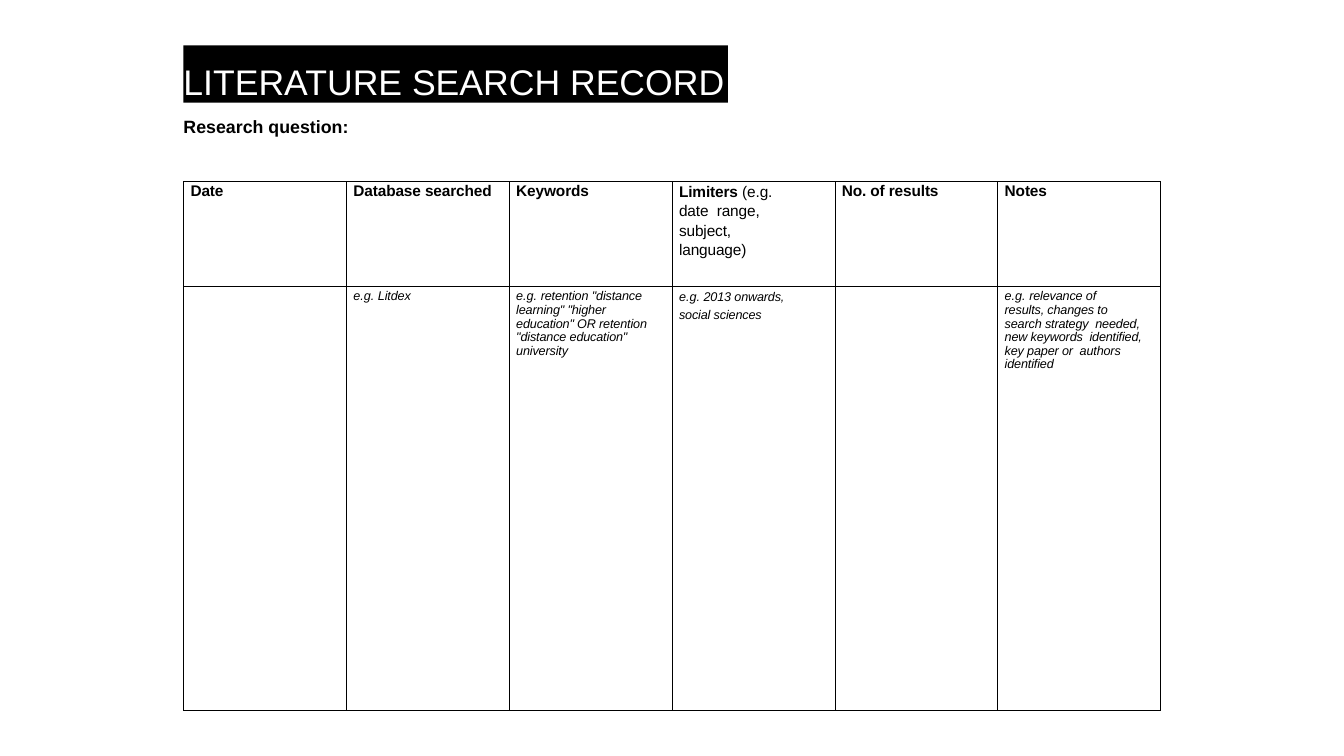
from lxml.etree import SubElement
from pptx import Presentation
from pptx.dml.color import RGBColor
from pptx.enum.shapes import MSO_SHAPE
from pptx.enum.text import MSO_ANCHOR, PP_ALIGN
from pptx.oxml.ns import qn
from pptx.util import Inches, Pt

COLORS = {"ink": "000000", "paper": "FFFFFF"}
HEADINGS = [
    ("Date", "", 0),
    ("Database searched", "", 0),
    ("Keywords", "", 0),
    ("Limiters ", "(e.g. date  range, subject,  language)", 0.45),
    ("No. of results", "", 0),
    ("Notes", "", 0),
]
EXAMPLES = {
    1: (["Litdex"], 12.4, 0),
    2: (['retention "distance',
         'learning" "higher  education" OR retention  "distance education"  university'], 12.2, 0.15),
    3: (["2013 onwards,  social sciences"], 12.7, 0.25),
    5: (["relevance of",
         "results, changes to  search strategy  needed, new keywords  identified, "
         "key paper or  authors identified"], 12.2, 0.12),
}


class SearchRecord:
    font = "Arial"

    def __init__(self, slide):
        self.s = slide

    def color(self, name):
        return RGBColor.from_string(COLORS[name])

    def run(self, p, text, size, color="ink", bold=False, italic=False, spacing=0):
        r = p.add_run()
        r.text = text
        r.font.name = self.font
        r.font.size = Pt(size)
        r.font.bold = bold
        r.font.italic = italic
        r.font.color.rgb = self.color(color)
        if spacing:
            r.font._element.set("spc", str(round(spacing * 100)))

    def frame(self, tf, top=0):
        tf.margin_left = tf.margin_right = tf.margin_bottom = 0
        tf.margin_top = Inches(top)
        tf.word_wrap = True
        return tf.paragraphs[0]

    def indent(self, p, left):
        p._p.get_or_add_pPr().set("marL", str(Inches(left)))

    def title(self, text, x, y, w, h):
        sp = self.s.shapes.add_shape(MSO_SHAPE.RECTANGLE, Inches(x), Inches(y), Inches(w), Inches(h))
        sp.shadow.inherit = False
        sp.fill.solid()
        sp.fill.fore_color.rgb = self.color("ink")
        sp.line.fill.background()
        p = self.frame(sp.text_frame, 0.15)
        sp.text_frame.vertical_anchor = MSO_ANCHOR.MIDDLE
        p.alignment = PP_ALIGN.LEFT
        p.space_before = Pt(10.5)
        self.run(p, text, 25.4, "paper")

    def label(self, text, x, y, w, h):
        sp = self.s.shapes.add_textbox(Inches(x), Inches(y), Inches(w), Inches(h))
        p = self.frame(sp.text_frame)
        self.indent(p, 0.01)
        self.run(p, text, 12.7, bold=True)

    def table(self, x, y, w, heights, columns):
        shape = self.s.shapes.add_table(len(heights), columns, Inches(x), Inches(y),
                                        Inches(w), Inches(sum(heights)))
        table = shape.table
        for column in table.columns:
            column.width = Inches(w / columns)
        for row, height in zip(table.rows, heights):
            row.height = Inches(height)
        for cell in table.iter_cells():
            cell.margin_left = cell.margin_right = cell.margin_top = cell.margin_bottom = 0
            self.borders(cell)
            cell.fill.background()
        return table

    def borders(self, cell):
        tcPr = cell._tc.get_or_add_tcPr()
        for side in ("lnL", "lnR", "lnT", "lnB"):
            ln = SubElement(tcPr, qn(f"a:{side}"), w=str(Pt(0.48)))
            fill = SubElement(ln, qn("a:solidFill"))
            SubElement(fill, qn("a:srgbClr"), val=COLORS["ink"])

    def cell_paragraph(self, p, line_spacing, before=0):
        self.indent(p, 0.07)
        p.line_spacing = line_spacing
        p.space_before = Pt(before)

    def heading(self, cell, text, detail, right):
        cell.margin_right = Inches(right)
        p = cell.text_frame.paragraphs[0]
        self.cell_paragraph(p, Pt(13.8 if detail else 13.4))
        self.run(p, text, 11, bold=True, spacing=-0.1)
        if detail:
            self.run(p, detail, 11, spacing=-0.1)

    def example(self, cell, lines, spacing, right):
        cell.margin_right = Inches(right)
        tf = cell.text_frame
        for i, text in enumerate(lines):
            p = tf.add_paragraph() if i else tf.paragraphs[0]
            self.cell_paragraph(p, 0.96 if i else Pt(spacing), 0.3 if i else 0)
            if i == 0:
                self.run(p, "e.g. ", 9, italic=True)
            self.run(p, text, 9, italic=True, spacing=-0.1)


def main():
    prs = Presentation()
    prs.slide_width, prs.slide_height = Inches(13.33), Inches(7.5)
    record = SearchRecord(prs.slides.add_slide(prs.slide_layouts[6]))
    record.title("LITERATURE SEARCH RECORD", 1.82, 0.45, 5.4, 0.57)
    record.label("Research question:", 1.81, 1.15, 1.66, 0.21)
    table = record.table(1.82, 1.8, 9.69, [1.04, 4.21], len(HEADINGS))
    for column, heading in enumerate(HEADINGS):
        record.heading(table.cell(0, column), *heading)
    for column, example in EXAMPLES.items():
        record.example(table.cell(1, column), *example)
    prs.save("out.pptx")


if __name__ == "__main__":
    main()
